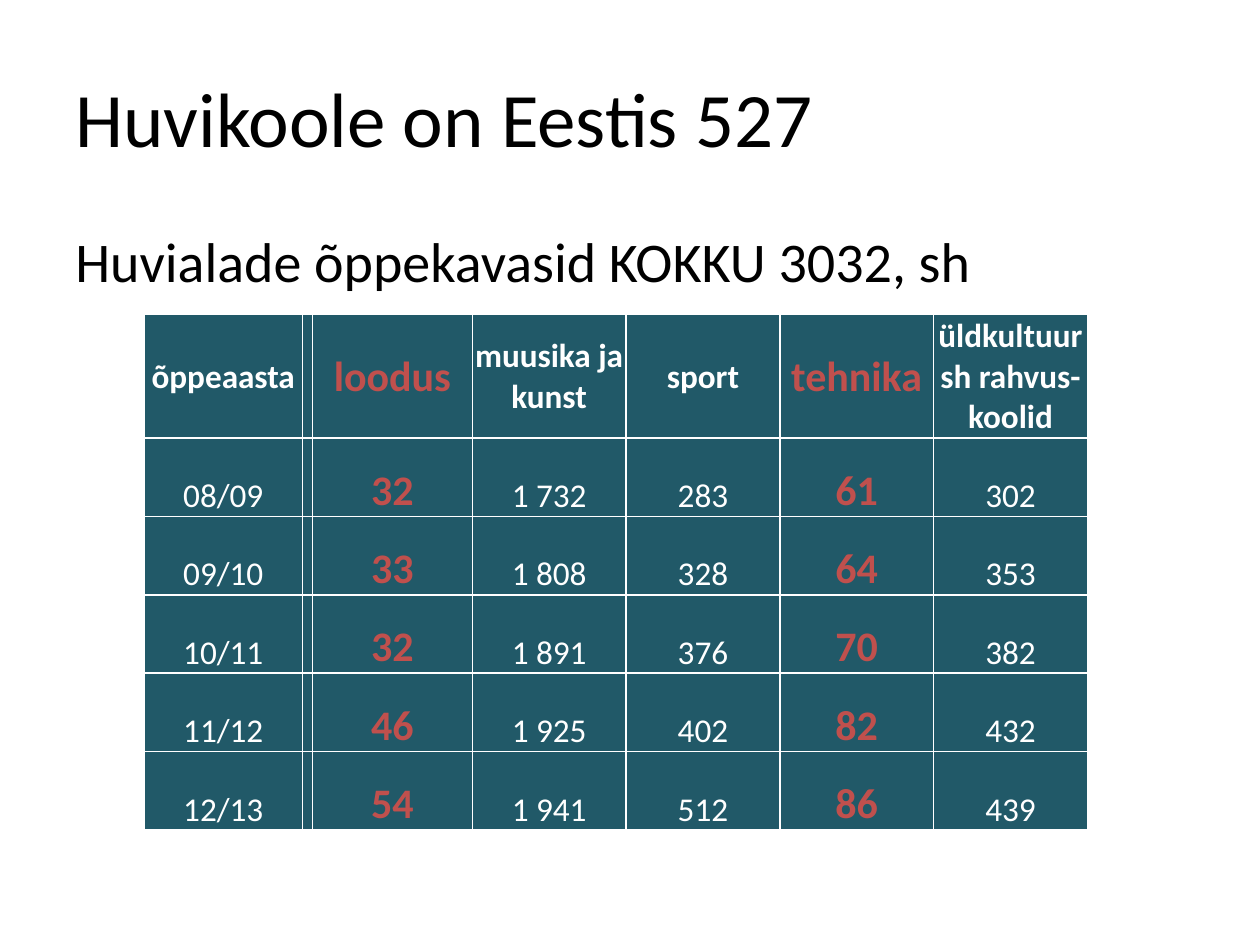
"""Build the slide on Estonian hobby schools and their curricula."""
import pptx
import pptx.dml.color
import pptx.enum.text
import pptx.util
from dataclasses import dataclass

Cm = pptx.util.Cm
Pt = pptx.util.Pt
Align = pptx.enum.text.PP_ALIGN
Anchor = pptx.enum.text.MSO_ANCHOR


@dataclass(frozen=True)
class Theme:
    font: str = "Calibri"
    ink: str = "000000"
    pale: str = "FFFFFF"
    teal: str = "215968"
    red: str = "C0504D"
    title: int = 44
    lead: int = 32
    large: int = 24
    small: int = 19


theme = Theme()


def write(para, text, size, color, bold=False):
    run = para.add_run()
    run.text = text
    run.font.name = theme.font
    run.font.size = Pt(size)
    run.font.bold = bold
    run.font.color.rgb = pptx.dml.color.RGBColor.from_string(color)


deck = pptx.Presentation()
deck.slide_width, deck.slide_height = Cm(25.4), Cm(19.05)
slide = deck.slides.add_slide(deck.slide_layouts[6])

heads = [
    ("Huvikoole on Eestis 527", 0.76, 3.18, theme.title, Anchor.MIDDLE, 0),
    ("Huvialade õppekavasid KOKKU 3032, sh", 4.45, 12.57, theme.lead, Anchor.TOP, 6.4),
]
for text, top, height, size, anchor, gap in heads:
    box = slide.shapes.add_textbox(Cm(1.27), Cm(top), Cm(22.86), Cm(height))
    frame = box.text_frame
    frame.word_wrap = True
    frame.vertical_anchor = anchor
    para = frame.paragraphs[0]
    para.space_before = Pt(gap)
    write(para, text, size, theme.ink)

rows = [
    ["õppeaasta", "", "loodus", "muusika ja kunst", "sport", "tehnika",
     "üldkultuur sh rahvus-koolid"],
    ["08/09", "", "32", "1 732", "283", "61", "302"],
    ["09/10", "", "33", "1 808", "328", "64", "353"],
    ["10/11", "", "32", "1 891", "376", "70", "382"],
    ["11/12", "", "46", "1 925", "402", "82", "432"],
    ["12/13", "", "54", "1 941", "512", "86", "439"],
]
widths = [3.2, 0.2, 3.22] + [3.1] * 4
heights = [2.5] + [1.58] * 5
accents = {2, 5}

table = slide.shapes.add_table(
    len(rows), len(widths), Cm(2.9), Cm(6.33), Cm(sum(widths)), Cm(sum(heights))
).table
for col, width in zip(table.columns, widths):
    col.width = Cm(width)
for row, height in zip(table.rows, heights):
    row.height = Cm(height)

for r, row in enumerate(rows):
    for c, text in enumerate(row):
        cell = table.cell(r, c)
        cell.fill.solid()
        cell.fill.fore_color.rgb = pptx.dml.color.RGBColor.from_string(theme.teal)
        cell.margin_left = cell.margin_right = cell.margin_top = Cm(0.03)
        cell.margin_bottom = Cm(0)
        cell.vertical_anchor = Anchor.BOTTOM if r else Anchor.MIDDLE
        para = cell.text_frame.paragraphs[0]
        para.alignment = Align.CENTER
        if text:
            accent = c in accents
            size = theme.large if accent else theme.small
            color = theme.red if accent else theme.pale
            write(para, text, size, color, accent or r == 0)

deck.save("out.pptx")
